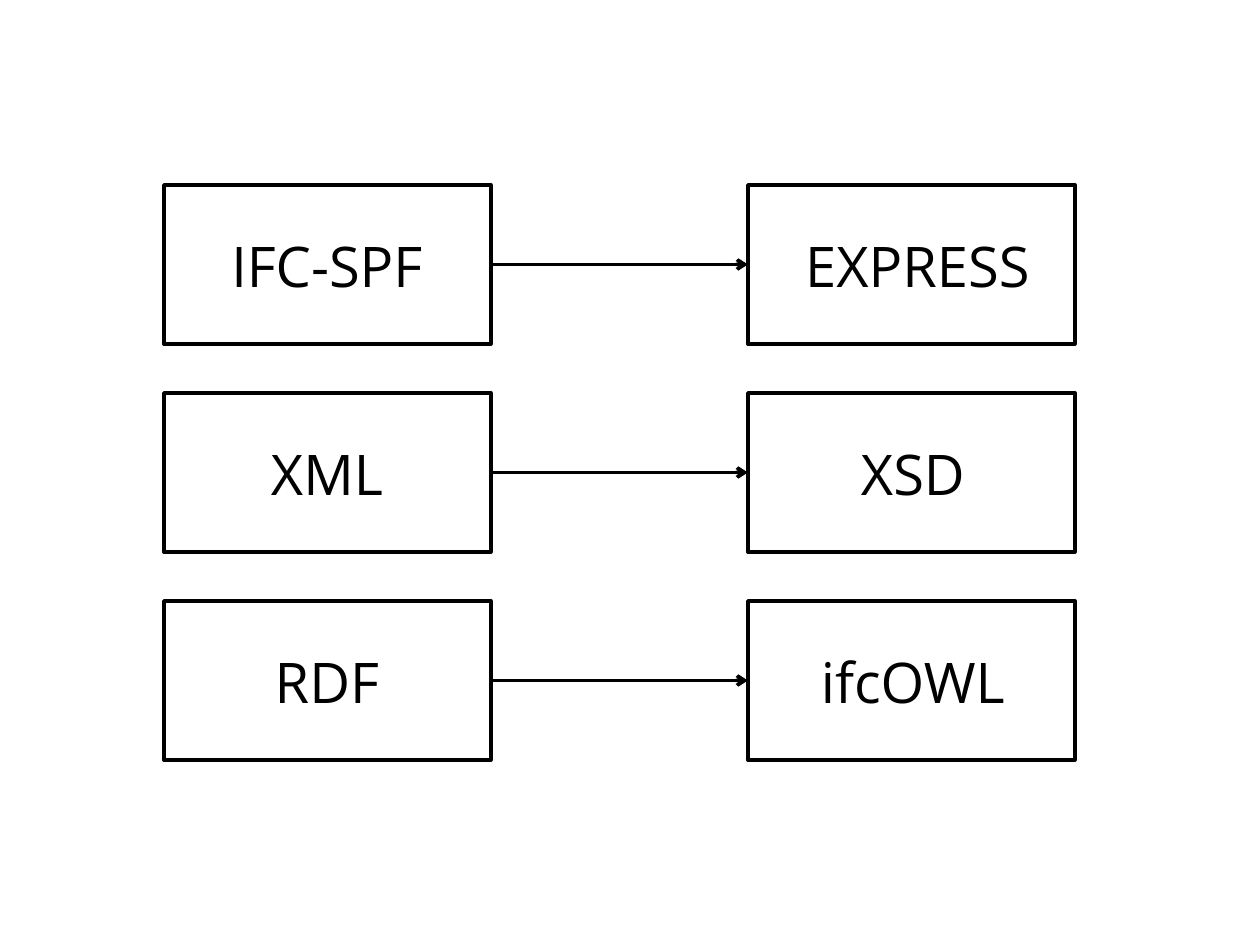
from lxml import etree
from pptx import Presentation
from pptx import util as u
from pptx.dml.color import RGBColor
from pptx.enum import shapes, text
from pptx.oxml.ns import qn

PX_PER_INCH = 126
COLORS = {"ink": "000000"}
FONT = "Open Sans"
BOX_W, BOX_H = 327, 159
LEFT_X, RIGHT_X = 164, 748
FIRST_Y, ROW_STEP = 185, 208
LABEL_DY, LABEL_H = 40, 81
FORMATS = [
    ("IFC-SPF", "EXPRESS", 779, 277),
    ("XML", "XSD", 799, 228),
    ("RDF", "ifcOWL", 799, 228),
]


def px(n):
    return u.Emu(round(n * u.Inches(1) / PX_PER_INCH))


def set_line(line):
    line.color.rgb = RGBColor.from_string(COLORS["ink"])
    line.width = u.Pt(2)


def add_box(slide, x, y):
    sp = slide.shapes.add_shape(
        shapes.MSO_SHAPE.RECTANGLE, px(x), px(y), px(BOX_W), px(BOX_H))
    sp.shadow.inherit = False
    sp.fill.background()
    set_line(sp.line)


def add_label(slide, label, x, y, w):
    sp = slide.shapes.add_textbox(px(x), px(y), px(w), px(LABEL_H))
    tf = sp.text_frame
    tf.word_wrap = True
    tf.auto_size = text.MSO_AUTO_SIZE.SHAPE_TO_FIT_TEXT
    p = tf.paragraphs[0]
    p.text = label
    p.alignment = text.PP_ALIGN.CENTER
    p.font.name = FONT
    p.font.size = u.Pt(32)
    p.font.color.rgb = RGBColor.from_string(COLORS["ink"])


def add_arrow(slide, x1, x2, y):
    sp = slide.shapes.add_connector(
        shapes.MSO_CONNECTOR.STRAIGHT, px(x1), px(y), px(x2), px(y))
    set_line(sp.line)
    etree.SubElement(sp.line._get_or_add_ln(), qn("a:tailEnd"), type="arrow")
    etree.SubElement(sp._element.spPr, qn("a:effectLst"))


def main():
    prs = Presentation()
    prs.slide_width, prs.slide_height = px(1260), px(945)
    slide = prs.slides.add_slide(prs.slide_layouts[6])
    for i, (data_format, schema, schema_x, schema_w) in enumerate(FORMATS):
        y = FIRST_Y + i * ROW_STEP
        add_box(slide, RIGHT_X, y)
        add_label(slide, schema, schema_x, y + LABEL_DY, schema_w)
        add_box(slide, LEFT_X, y)
        add_label(slide, data_format, 213, y + LABEL_DY, 228)
        add_arrow(slide, LEFT_X + BOX_W, RIGHT_X, y + BOX_H / 2)
    prs.save("out.pptx")


if __name__ == "__main__":
    main()
